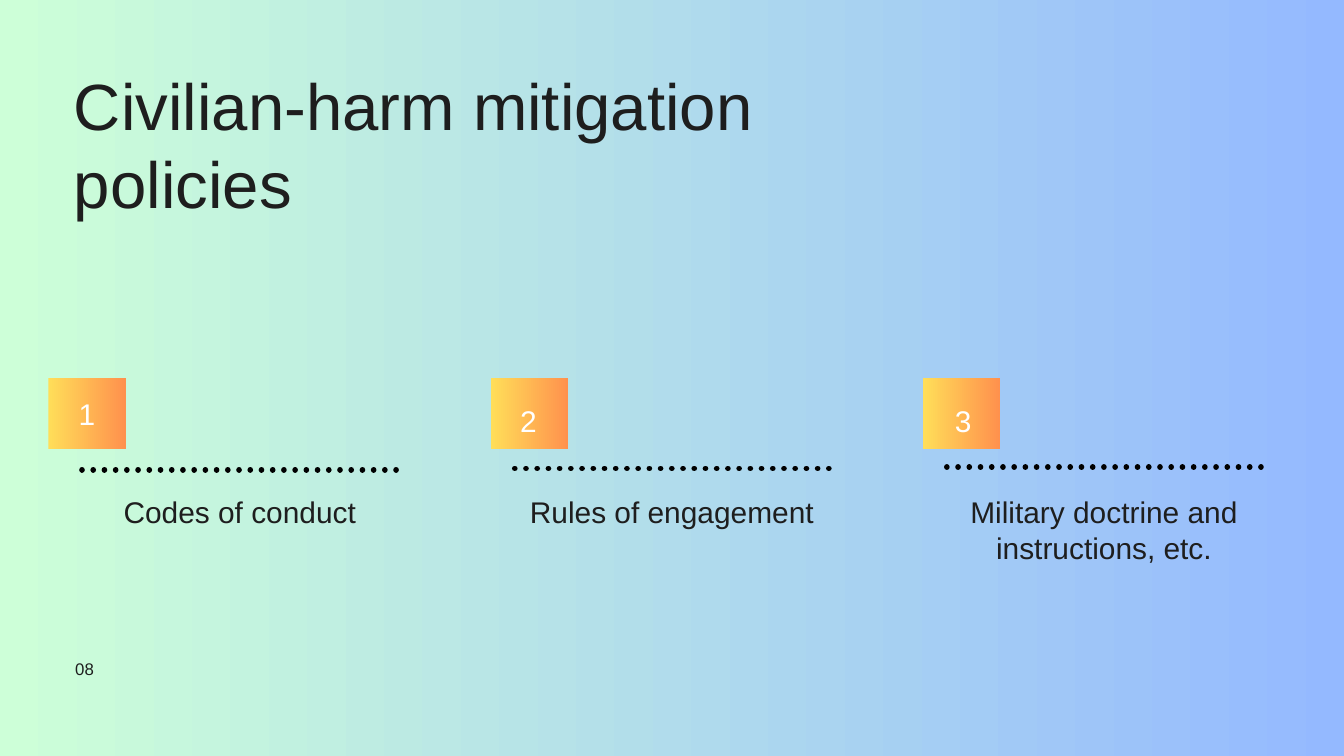
from pptx import Presentation
from pptx.dml.color import RGBColor
from pptx.enum.dml import MSO_LINE
from pptx.enum.shapes import MSO_CONNECTOR, MSO_SHAPE
from pptx.enum.text import MSO_ANCHOR, PP_ALIGN
from pptx.oxml.ns import qn
from pptx.util import Inches, Pt
from lxml.etree import SubElement

COLORS = {"ink": "1E1E1E", "white": "FFFFFF", "dots": "000000",
          "mint": "CDFFD8", "blue": "94B9FF",
          "yellow": "FFDE59", "orange": "FF914D"}
FONT = "Arial"

TITLE = "Civilian-harm mitigation policies"
PAGE = "08"
# number box is None where the number sits in the badge itself
POLICIES = [
    {"number": "1", "label": "Codes of conduct", "badge_x": 0.72, "number_box": None,
     "rule": (1.22, 6.99), "label_box": (1.13, 7.34, 4.88, 0.94)},
    {"number": "2", "label": "Rules of engagement", "badge_x": 7.31,
     "number_box": (7.64, 5.95, 0.82, 0.64),
     "rule": (7.66, 6.97), "label_box": (7.31, 7.34, 5.38, 0.55)},
    {"number": "3", "label": "Military doctrine and instructions, etc.", "badge_x": 13.73,
     "number_box": (14.11, 5.95, 3, 0.64),
     "rule": (14.09, 6.95), "label_box": (13.99, 7.34, 4.88, 1.48)},
]
BADGE_Y, BADGE_W, BADGE_H = 5.62, 1.15, 1.06
RULE_LENGTH = 4.79


def color(name):
    return RGBColor.from_string(COLORS[name])


def fill_gradient(fill, start, end):
    fill.gradient()
    fill.gradient_angle = 0
    for stop, position, name in zip(fill.gradient_stops, (0, 1), (start, end)):
        stop.position = position
        stop.color.rgb = color(name)


def write(frame, text, size, ink, align=PP_ALIGN.LEFT, spacing=None):
    paragraph = frame.paragraphs[0]
    paragraph.text = text
    paragraph.alignment = align
    if spacing:
        paragraph.line_spacing = Pt(spacing)
    paragraph.font.name = FONT
    paragraph.font.size = Pt(size)
    paragraph.font.color.rgb = color(ink)


def add_text(box, text, size, ink="ink", align=PP_ALIGN.LEFT, spacing=None, inset=True):
    frame = slide.shapes.add_textbox(*map(Inches, box)).text_frame
    frame.word_wrap = True
    if not inset:
        frame.margin_left = frame.margin_right = 0
        frame.margin_top = frame.margin_bottom = 0
    write(frame, text, size, ink, align, spacing)


def add_dotted_rule(x, y):
    rule = slide.shapes.add_connector(MSO_CONNECTOR.STRAIGHT, Inches(x), Inches(y),
                                      Inches(x + RULE_LENGTH), Inches(y))
    rule.line.color.rgb = color("dots")
    rule.line.width = Pt(6)
    rule.line.dash_style = MSO_LINE.ROUND_DOT
    rule.line._get_or_add_ln().set("cap", "rnd")
    SubElement(rule._element.spPr, qn("a:effectLst"))


def add_badge(x):
    badge = slide.shapes.add_shape(MSO_SHAPE.RECTANGLE, Inches(x), Inches(BADGE_Y),
                                   Inches(BADGE_W), Inches(BADGE_H))
    badge.shadow.inherit = False
    badge.line.fill.background()
    fill_gradient(badge.fill, "yellow", "orange")
    return badge


prs = Presentation()
prs.slide_width, prs.slide_height = Inches(20), Inches(11.25)
slide = prs.slides.add_slide(prs.slide_layouts[6])
fill_gradient(slide.background.fill, "mint", "blue")

# Title
add_text((1.1, 0.97, 12.82, 2.36), TITLE, 70, spacing=84, inset=False)

# Numbered policies
for policy in POLICIES:
    add_dotted_rule(*policy["rule"])
    add_text(policy["label_box"], policy["label"], 32, align=PP_ALIGN.CENTER,
             spacing=38.8, inset=False)
    badge = add_badge(policy["badge_x"])
    if policy["number_box"]:
        add_text(policy["number_box"], policy["number"], 32, "white")
    else:
        badge.text_frame.vertical_anchor = MSO_ANCHOR.MIDDLE
        write(badge.text_frame, policy["number"], 32, "white", PP_ALIGN.CENTER)

# Page number
add_text((1.12, 9.75, 0.74, 0.38), PAGE, 18, spacing=25.2, inset=False)

prs.save("out.pptx")
